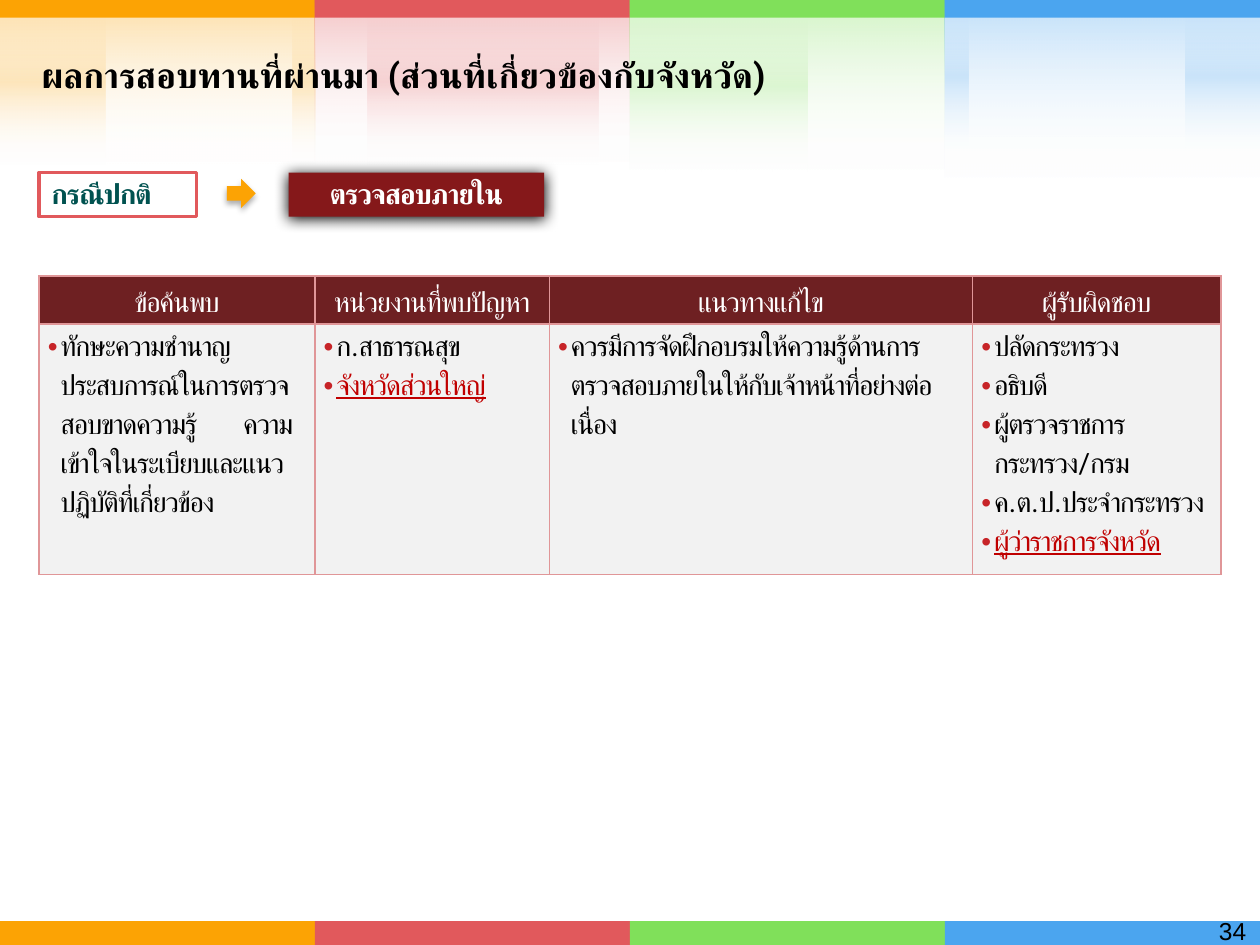
from lxml import etree
from pptx import Presentation
from pptx.dml.color import RGBColor
from pptx.enum.shapes import MSO_SHAPE
from pptx.enum.text import MSO_ANCHOR, MSO_AUTO_SIZE, PP_ALIGN
from pptx.oxml.ns import qn
from pptx.util import Inches, Pt

RECTANGLE, ARROW = MSO_SHAPE.RECTANGLE, MSO_SHAPE.RIGHT_ARROW
LEFT, CENTER, RIGHT = PP_ALIGN.LEFT, PP_ALIGN.CENTER, PP_ALIGN.RIGHT
MIDDLE, TOP = MSO_ANCHOR.MIDDLE, MSO_ANCHOR.TOP
NO_AUTOFIT = MSO_AUTO_SIZE.NONE
ORANGE, RED, GREEN, BLUE = "FCA304", "E1595C", "80E05A", "4BA5EF"
BLACK, WHITE, DARK_RED = "000000", "FFFFFF", "C00000"
BAND_WIDTH = 2.5
BANDS = [
    (ORANGE, 1.31, [(2.32, 0.18, 1.31), (0, 0.84, 1.31)]),
    (RED, 1.31, [(2.92, 1.83, 1.31)]),
    (GREEN, 1.37, [(5, 1.41, 1.37)]),
    (BLUE, 1.43, [(7.5, 0.19, 1.22), (9.41, 0.59, 1.22)]),
]
COLUMN_WIDTHS = [2.19, 1.86, 3.36, 1.97]
ROW_HEIGHTS = [0.38, 1.99]
HEADERS = [("ข้อค้นพบ", -0.7), ("หน่วยงานที่พบปัญหา", -0.6),
           ("แนวทางแก้ไข", -0.7), ("ผู้รับผิดชอบ", -0.6)]
FINDINGS = [
    [("ทักษะความชำนาญประสบการณ์ในการตรวจสอบขาดความรู้\tความเข้าใจในระเบียบและแนวปฏิบัติที่เกี่ยวข้อง", False)],
    [("ก.สาธารณสุข", False), ("จังหวัดส่วนใหญ่", True)],
    [("ควรมีการจัดฝึกอบรมให้ความรู้ด้านการตรวจสอบภายในให้กับเจ้าหน้าที่อย่างต่อเนื่อง", False)],
    [("ปลัดกระทรวง", False), ("อธิบดี", False), ("ผู้ตรวจราชการกระทรวง/กรม", False),
     ("ค.ต.ป.ประจำกระทรวง", False), ("ผู้ว่าราชการจังหวัด", True)],
]


def color(value):
    """Return the colour for a hex string."""
    return RGBColor.from_string(value)


def add_element(parent, tag, **attributes):
    """Append a DrawingML element with the given attributes."""
    texts = {name: str(value) for name, value in attributes.items()}
    return etree.SubElement(parent, qn(tag), texts)


def add_color(parent, value, opacity=100):
    """Append an RGB colour with its opacity in percent."""
    element = add_element(parent, "a:srgbClr", val=value)
    add_element(element, "a:alpha", val=opacity * 1000)


def add_block(slide, box, fill=None, line=None, preset=RECTANGLE):
    """Add a preset shape with an optional fill and outline."""
    shape = slide.shapes.add_shape(preset, *map(Inches, box))
    shape.shadow.inherit = False
    if fill:
        shape.fill.solid()
        shape.fill.fore_color.rgb = color(fill)
    else:
        shape.fill.background()
    if line:
        shape.line.color.rgb = color(line)
        shape.line.width = Pt(2)
    else:
        shape.line.fill.background()
    return shape


def add_gradient(slide, box, stops):
    """Add a rectangle with a vertical gradient of translucent stops."""
    shape = add_block(slide, box)
    shape.fill.gradient()
    shape.fill.gradient_angle = 270
    stop_list = shape.fill._xPr.find(qn("a:gradFill")).find(qn("a:gsLst"))
    for stop in list(stop_list):
        stop_list.remove(stop)
    for position, value, opacity in stops:
        stop = add_element(stop_list, "a:gs", pos=position * 1000)
        add_color(stop, value, opacity)


def add_shadow(shape, opacity, blur, distance):
    """Give a shape a black shadow that falls downwards."""
    effects = shape._element.spPr.find(qn("a:effectLst"))
    shadow = add_element(effects, "a:outerShdw", blurRad=Pt(blur), dist=Pt(distance),
                         dir=5400000, algn="ctr", rotWithShape=0)
    add_color(shadow, BLACK, opacity)


def format_paragraph(paragraph, size, value, align=LEFT, spacing=None,
                     bold=False, underline=False, tracking=0, font="Roboto"):
    """Format a paragraph and its runs."""
    paragraph.alignment = align
    paragraph.line_spacing = spacing
    for run in paragraph.runs:
        run.font.name = font
        run.font.size = Pt(size)
        run.font.bold = bold
        run.font.underline = underline
        run.font.color.rgb = color(value)
        properties = run._r.get_or_add_rPr()
        properties.set("spc", str(round(tracking * 100)))
        add_element(properties, "a:cs", typeface=font)


def add_bullet(paragraph):
    """Add a red bullet with a hanging indent and a tab stop."""
    properties = paragraph._p.get_or_add_pPr()
    properties.set("marL", str(Inches(0.1)))
    properties.set("indent", str(-Inches(0.1)))
    add_color(add_element(properties, "a:buClr"), "C72428")
    add_element(properties, "a:buFont", typeface="Arial")
    add_element(properties, "a:buChar", char="•")
    tabs = add_element(properties, "a:tabLst")
    add_element(tabs, "a:tab", pos=Inches(1.55), algn="l")


def format_cell(cell, fill, anchor, side_margin):
    """Set the margins, borders and fill of a cell."""
    cell.margin_left = cell.margin_right = Inches(side_margin)
    cell.margin_top = cell.margin_bottom = 0
    cell.vertical_anchor = anchor
    properties = cell._tc.get_or_add_tcPr()
    for side in ("a:lnL", "a:lnR", "a:lnT", "a:lnB"):
        border = add_element(properties, side, w=Pt(1))
        add_color(add_element(border, "a:solidFill"), "E09698")
    cell.fill.solid()
    cell.fill.fore_color.rgb = color(fill)


def add_bands(slide):
    """Draw the coloured bands along the top and bottom edges."""
    for index, (value, height, strips) in enumerate(BANDS):
        left = index * BAND_WIDTH
        fade = [(0, value, 20), (100, WHITE, 0)]
        glow = [(0, WHITE, 0), (50, value, 20), (100, WHITE, 0)]
        add_gradient(slide, (left, 0, BAND_WIDTH, height), fade)
        for strip_left, width, strip_height in strips:
            add_gradient(slide, (strip_left, 0, width, strip_height), glow)
        add_gradient(slide, (left, 0, BAND_WIDTH, height), fade)
        add_block(slide, (left, 0, BAND_WIDTH, 0.14), value)
        add_block(slide, (left, 7.31, BAND_WIDTH, 0.19), value)


def add_title(slide, text):
    """Fill and place the title placeholder."""
    title = slide.shapes.title
    title.left, title.top, title.width, title.height = map(Inches, (0.23, 0.23, 9.7, 0.63))
    frame = title.text_frame
    frame.text = text
    frame.auto_size = NO_AUTOFIT
    frame.vertical_anchor = MIDDLE
    format_paragraph(frame.paragraphs[0], 20, BLACK, spacing=1.3, bold=True)


def add_label(slide, box, text, value, align, fill=None, line=None):
    """Add a rectangle with a bold label."""
    shape = add_block(slide, box, fill, line)
    shape.text_frame.text = text
    format_paragraph(shape.text_frame.paragraphs[0], 16, value, align, Pt(18), True, tracking=-0.6)
    return shape


def add_findings_table(slide):
    """Add the table of findings, agencies, remedies and owners."""
    table = slide.shapes.add_table(2, 4, Inches(0.31), Inches(2.19), Inches(sum(COLUMN_WIDTHS)),
                                   Inches(sum(ROW_HEIGHTS))).table
    for row, height in zip(table.rows, ROW_HEIGHTS):
        row.height = Inches(height)
    for index, (width, (header, tracking), items) in enumerate(zip(COLUMN_WIDTHS, HEADERS, FINDINGS)):
        table.columns[index].width = Inches(width)
        head, body = table.cell(0, index), table.cell(1, index)
        format_cell(head, "6E2022", MIDDLE, 0.02)
        head.text_frame.text = header
        format_paragraph(head.text_frame.paragraphs[0], 16, WHITE, CENTER, 1.2, tracking=tracking)
        format_cell(body, "F2F2F2", TOP, 0.07)
        body.text_frame.text = "\n".join(text for text, _ in items)
        for paragraph, (_, marked) in zip(body.text_frame.paragraphs, items):
            format_paragraph(paragraph, 16, DARK_RED if marked else BLACK, spacing=1.2,
                             underline=marked, tracking=-0.7)
            add_bullet(paragraph)


def add_page_number(slide, text):
    """Add the page number in the lower right corner."""
    frame = slide.shapes.add_textbox(*map(Inches, (7.66, 7.22, 2.33, 0.36))).text_frame
    frame.word_wrap = True
    frame.text = text
    format_paragraph(frame.paragraphs[0], 14, BLACK, RIGHT, font="Arial")


def main():
    """Build and save the slide."""
    presentation = Presentation()
    presentation.slide_width, presentation.slide_height = Inches(10), Inches(7.5)
    slide = presentation.slides.add_slide(presentation.slide_layouts[5])
    add_bands(slide)
    add_findings_table(slide)
    add_page_number(slide, "34")
    add_title(slide, "ผลการสอบทานที่ผ่านมา (ส่วนที่เกี่ยวข้องกับจังหวัด)")
    audit = add_label(slide, (2.29, 1.37, 2.03, 0.35), "ตรวจสอบภายใน", WHITE, CENTER, fill="85181A")
    add_shadow(audit, 100, 8.5, 1)
    add_label(slide, (0.31, 1.37, 1.25, 0.35), "กรณีปกติ", "005250", LEFT, line=RED)
    arrow = add_block(slide, (1.8, 1.42, 0.23, 0.23), ORANGE, preset=ARROW)
    add_shadow(arrow, 32, 3.5, 2.2)
    title = slide.shapes.title._element
    title.getparent().append(title)
    presentation.save("out.pptx")


if __name__ == "__main__":
    main()
